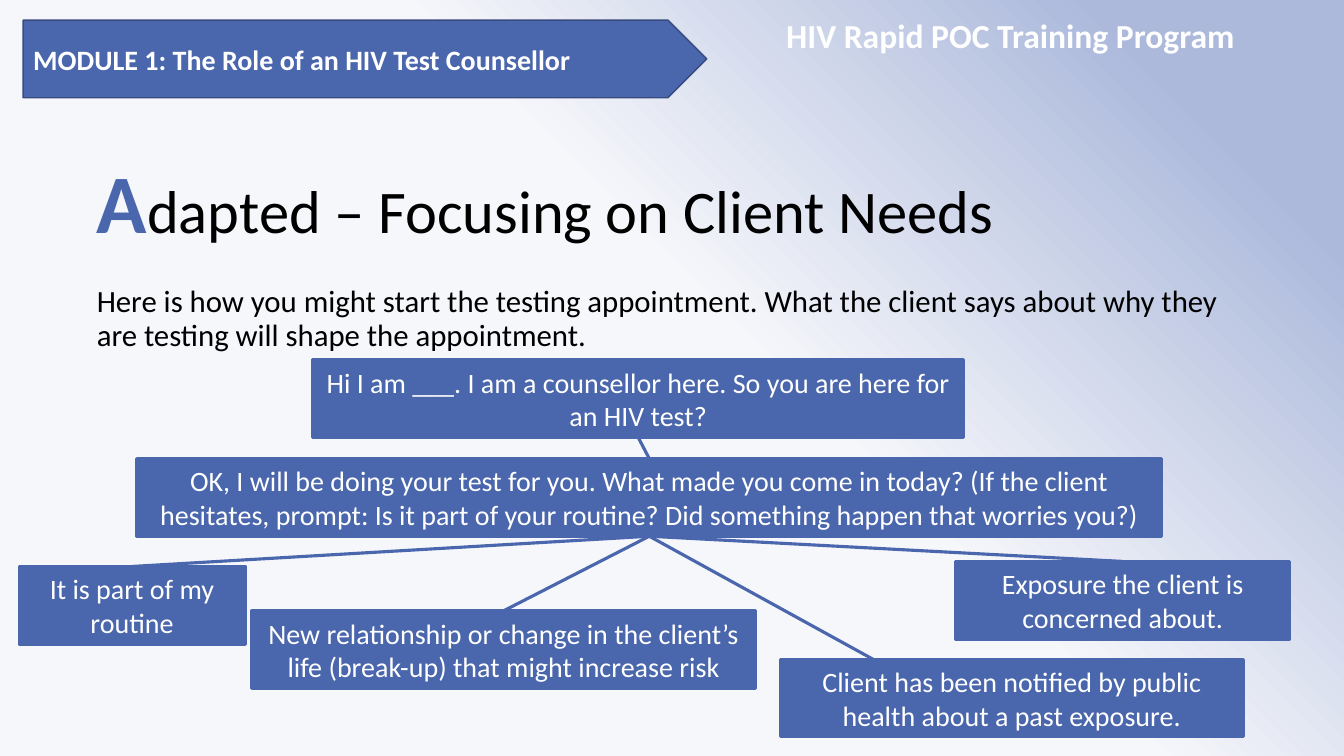
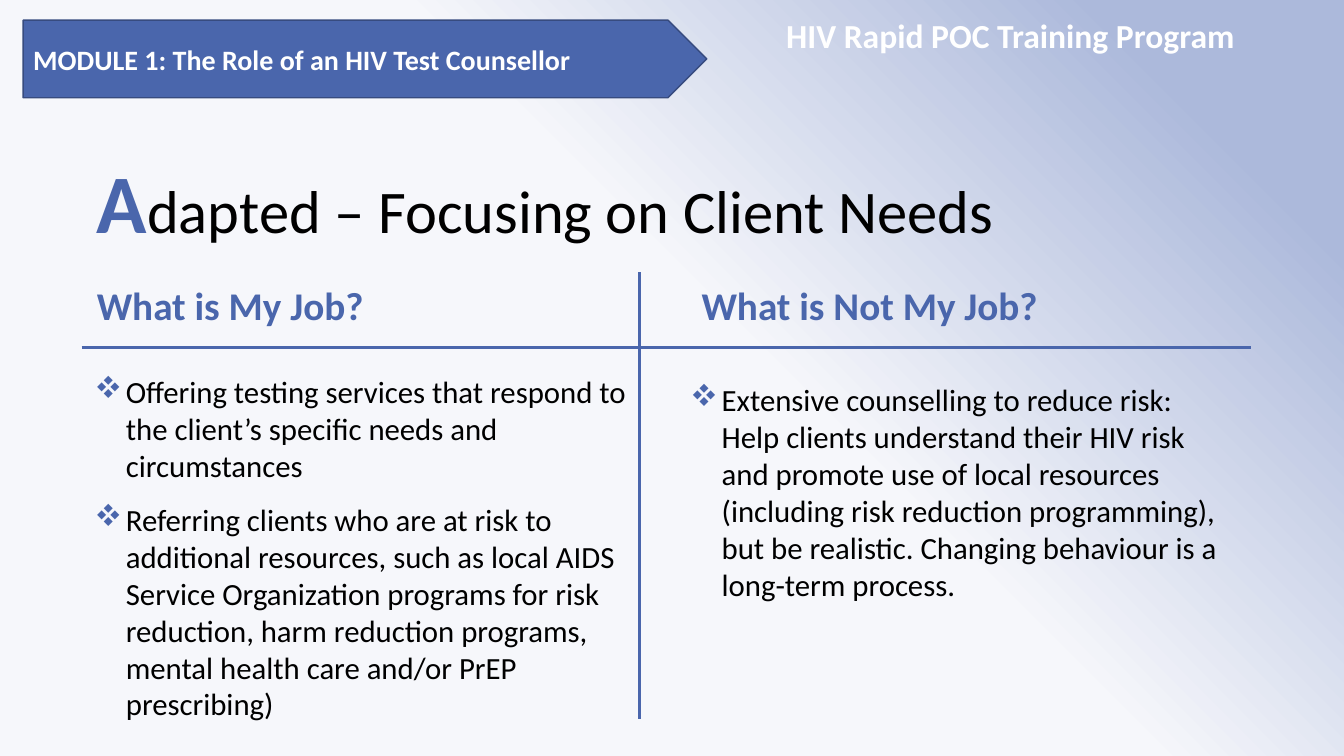
from pptx import Presentation
from pptx.dml.color import RGBColor
from pptx.enum.shapes import MSO_CONNECTOR as CONN, MSO_SHAPE as SHAPE
from pptx.enum.text import MSO_ANCHOR as ANCHOR, MSO_AUTO_SIZE as FIT, PP_ALIGN as ALIGN
from pptx.oxml import parse_xml
from pptx.oxml.ns import nsdecls, qn
from pptx.util import Inches, Pt
from lxml.etree import SubElement

FONT = "Calibri"
COLORS = {
    "accent": "4A66AC",
    "edge": "374B7F",
    "text": "000000",
    "white": "FFFFFF",
}
GRADIENT = [(55, "F6F7FB"), (88, "ACB9DB"), (100, "ACB9DB"), (100, "C8D1E7")]


def rgb(name):
    """Return the palette colour with this name."""
    return RGBColor.from_string(COLORS[name])


def place(sp, left, top, width, height):
    """Move and size a shape, in inches."""
    sp.left, sp.top = Inches(left), Inches(top)
    sp.width, sp.height = Inches(width), Inches(height)


def add_text(p, text, size=20, color="text", bold=False):
    """Append a formatted run to a paragraph."""
    r = p.add_run()
    r.text = text
    r.font.name, r.font.size, r.font.bold = FONT, Pt(size), bold
    r.font.color.rgb = rgb(color)


def space(p, line=1.0, after=0):
    """Set left alignment and the spacing of a paragraph."""
    p.alignment = ALIGN.LEFT
    p.line_spacing, p.space_before, p.space_after = line, Pt(0), Pt(after)


def set_background(prs):
    """Give the slide master its diagonal gradient."""
    stops = "".join(
        f'<a:gs pos="{pos * 1000}"><a:srgbClr val="{color}"/></a:gs>'
        for pos, color in GRADIENT
    )
    master = prs.slide_master
    master.background.fill.solid()
    bg = master.element.cSld.find(qn("p:bg")).find(qn("p:bgPr"))
    bg.replace(bg[0], parse_xml(
        f'<a:gradFill {nsdecls("a")} rotWithShape="1"><a:gsLst>{stops}</a:gsLst>'
        '<a:lin ang="18900000" scaled="0"/></a:gradFill>'
    ))


def add_textbox(s, left, top, width, height):
    """Add a wrapping text box and return its frame."""
    tf = s.shapes.add_textbox(*map(Inches, (left, top, width, height))).text_frame
    tf.word_wrap = True
    return tf


def add_box(s, kind, text, left, top, width, height, line="accent", weight=2.25,
            align=ALIGN.CENTER, bold=False):
    """Add a filled shape with white text."""
    sp = s.shapes.add_shape(kind, *map(Inches, (left, top, width, height)))
    sp.shadow.inherit = False
    sp.fill.solid()
    sp.fill.fore_color.rgb = rgb("accent")
    sp.line.color.rgb, sp.line.width = rgb(line), Pt(weight)
    tf = sp.text_frame
    tf.word_wrap = True
    tf.vertical_anchor = ANCHOR.MIDDLE
    p = tf.paragraphs[0]
    p.alignment = align
    add_text(p, text, color="white", bold=bold)


def add_line(s, start, end):
    """Add a straight line between two points, in inches."""
    c = s.shapes.add_connector(CONN.STRAIGHT, *map(Inches, (*start, *end)))
    c.line.color.rgb, c.line.width = rgb("accent"), Pt(2.25)
    SubElement(c._element.spPr, qn("a:effectLst"))


def add_bullets(s, items, left, top, width, height):
    """Add a text box of diamond bullets."""
    tf = add_textbox(s, left, top, width, height)
    for i, item in enumerate(items):
        p = tf.add_paragraph() if i else tf.paragraphs[0]
        pPr = p._p.get_or_add_pPr()
        pPr.set("marL", str(Inches(0.31)))
        pPr.set("indent", str(-Inches(0.31)))
        color = SubElement(pPr, qn("a:buClr"))
        SubElement(color, qn("a:srgbClr"), val=COLORS["accent"])
        SubElement(pPr, qn("a:buFont"), typeface="Wingdings", charset="2")
        SubElement(pPr, qn("a:buChar"), char="v")
        space(p, after=12)
        add_text(p, item, size=22)


def add_slide(prs):
    """Add a slide with the shared header and title; return it and its body."""
    s = prs.slides.add_slide(prs.slide_layouts[0])
    title, body = s.placeholders
    for sp in (title, body):
        sp.text_frame.word_wrap = True
        sp.text_frame.auto_size = FIT.NONE
    place(title, 0.86, 1.72, 11.48, 0.83)
    title.text_frame.vertical_anchor = ANCHOR.BOTTOM
    p = title.text_frame.paragraphs[0]
    space(p, line=0.9, after=18)
    add_text(p, "A", size=59.4, color="accent", bold=True)
    add_text(p, "dapted – Focusing on Client Needs", size=43.2)
    place(body, 0.86, 2.79, 11.74, 4.43)
    body.text_frame.vertical_anchor = ANCHOR.TOP
    space(body.text_frame.paragraphs[0], line=0.9)

    tf = add_textbox(s, 7.7, 0.1, 5.5, 0.4)
    add_text(tf.paragraphs[0], "HIV Rapid POC Training Program", size=24,
             color="white", bold=True)
    add_box(s, SHAPE.PENTAGON, "MODULE 1: The Role of an HIV Test Counsellor",
            0.23, 0.2, 6.78, 0.77, line="edge", weight=1, align=ALIGN.LEFT, bold=True)
    return s, body


def build_conversation(prs):
    """Build the slide with the opening conversation tree."""
    s, body = add_slide(prs)
    add_text(body.text_frame.paragraphs[0],
             "Here is how you might start the testing appointment. What the client "
             "says about why they are testing will shape the appointment.", size=22)
    height = 0.77
    greeting = (3.1, 3.57, 6.46)
    question = (1.36, 4.55, 10.16)
    add_box(s, SHAPE.RECTANGLE, "Hi I am ___. I am a counsellor here. So you are here "
            "for an HIV test?", *greeting, height)
    add_box(s, SHAPE.RECTANGLE, "OK, I will be doing your test for you. What made you "
            "come in today? (If the client hesitates, prompt: Is it part of your "
            "routine? Did something happen that worries you?)", *question, height)
    center = question[0] + question[2] / 2
    add_line(s, (greeting[0] + greeting[2] / 2, greeting[1] + height),
             (center, question[1]))
    answers = [
        ("It is part of my routine", 0.19, 5.62, 2.24, 0.5),
        ("New relationship or change in the client’s life (break-up) that might "
         "increase risk", 2.5, 6.06, 4.99, 0.5),
        ("Exposure the client is concerned about.", 9.48, 5.57, 3.31, 0.5),
        ("Client has been notified by public health about a past exposure.",
         7.74, 6.54, 4.59, 0.2),
    ]
    for text, left, top, width, joint in answers:
        add_box(s, SHAPE.RECTANGLE, text, left, top, width, height)
        add_line(s, (center, question[1] + height), (left + width * joint, top))


def build_job(prs):
    """Build the slide that compares what is and is not the job."""
    s, body = add_slide(prs)
    place(body, 0.86, 2.79, 5.4, 0.6)
    right = add_textbox(s, 6.86, 2.79, 5.4, 0.6)
    for tf, heading in ((body.text_frame, "What is My Job?"),
                        (right, "What is Not My Job?")):
        p = tf.paragraphs[0]
        space(p, line=0.9)
        add_text(p, heading, size=28, color="accent", bold=True)
    add_line(s, (6.34, 2.7), (6.34, 7.13))
    add_line(s, (0.81, 3.45), (12.41, 3.45))
    add_bullets(s, [
        "Offering testing services that respond to the client’s specific needs and "
        "circumstances",
        "Referring clients who are at risk to additional resources, such as local AIDS "
        "Service Organization programs for risk reduction, harm reduction programs, "
        "mental health care and/or PrEP prescribing)",
    ], 0.84, 3.65, 5.49, 3.6)
    add_bullets(s, [
        "Extensive counselling to reduce risk: Help clients understand their HIV risk "
        "and promote use of local resources (including risk reduction programming), "
        "but be realistic. Changing behaviour is a long-term process.",
    ], 6.75, 3.73, 5.57, 2.32)


def main():
    """Build and save the presentation."""
    prs = Presentation()
    prs.slide_width, prs.slide_height = Inches(13.33), Inches(7.5)
    set_background(prs)
    build_conversation(prs)
    build_job(prs)
    prs.save("out.pptx")


if __name__ == "__main__":
    main()
